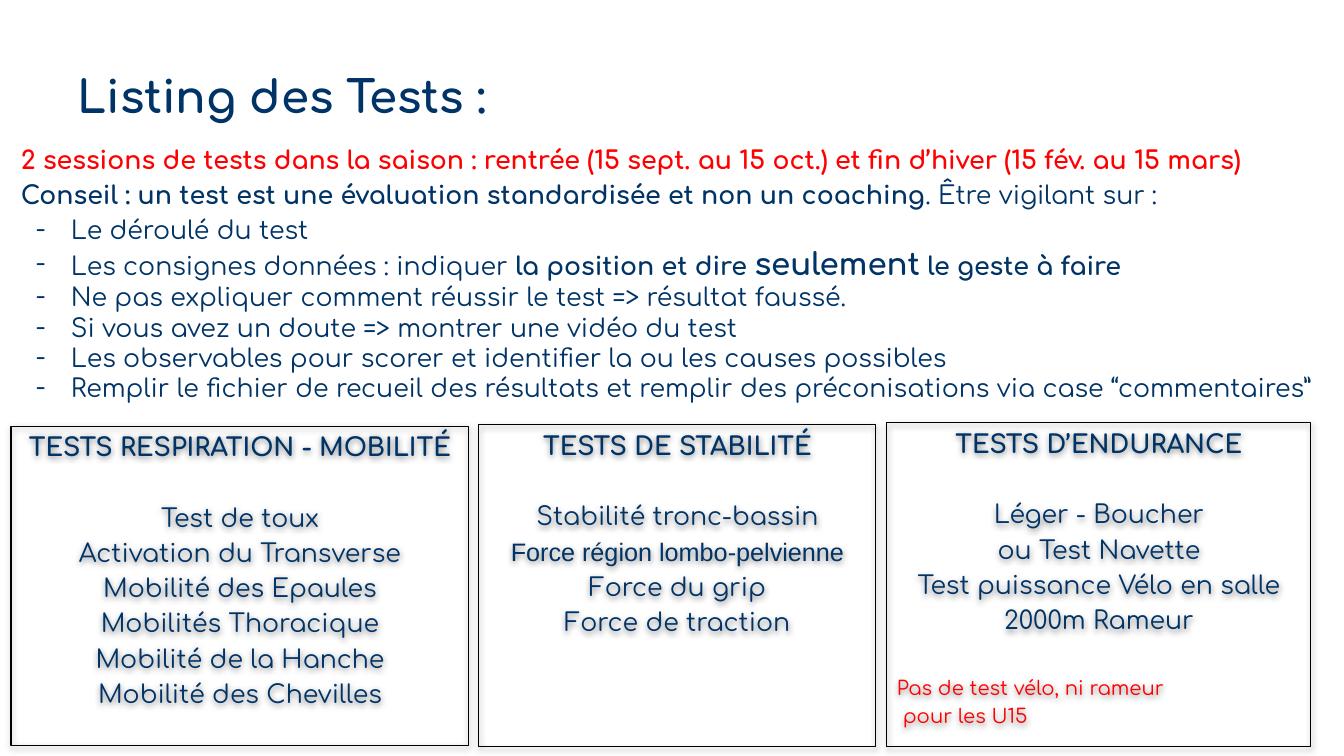
from dataclasses import dataclass

from lxml import etree
from pptx import Presentation
from pptx import util as u
from pptx.dml.color import RGBColor
from pptx.enum import shapes, text
from pptx.oxml.ns import qn

EMU_PER_PX = 914400 / 100.8
FONT = "Comfortaa"
COLOURS = {"navy": "003366", "red": "FF0000", "black": "000000"}
LINE_GAP = 3.6   # points before a paragraph
GROUP_GAP = 29   # points before a new group: one line more


@dataclass(frozen=True)
class Run:
    words: str
    size: int = 18
    bold: bool = False
    colour: str = "navy"
    font: str = FONT


@dataclass(frozen=True)
class Line:
    runs: tuple[Run, ...]
    before: float = LINE_GAP
    centred: bool = False
    indent: int = 0
    bullet: bool = False


@dataclass(frozen=True)
class Panel:
    left: int
    top: int
    width: int
    height: int
    heading: str
    tests: tuple[Run, ...]
    notes: tuple[Line, ...] = ()


def px(length: int) -> u.Emu:
    return u.Emu(round(length * EMU_PER_PX))


def rgb(name: str) -> RGBColor:
    return RGBColor.from_string(COLOURS[name])


def add_dash(paragraph) -> None:
    props = paragraph._p.get_or_add_pPr()
    props.set("indent", str(-px(35)))
    colour = etree.SubElement(props, qn("a:buClr"))
    etree.SubElement(colour, qn("a:srgbClr"), val=COLOURS["navy"])
    etree.SubElement(props, qn("a:buFont"), typeface=FONT)
    etree.SubElement(props, qn("a:buChar"), char="-")


def write(frame, lines: list[Line]) -> None:
    frame.word_wrap = True
    for number, line in enumerate(lines):
        paragraph = frame.add_paragraph() if number else frame.paragraphs[0]
        if line.indent:
            paragraph._p.get_or_add_pPr().set("marL", str(px(line.indent)))
        if line.bullet:
            add_dash(paragraph)
        paragraph.alignment = text.PP_ALIGN.CENTER if line.centred else text.PP_ALIGN.LEFT
        paragraph.space_before = u.Pt(line.before if number else 0)
        for part in line.runs:
            run = paragraph.add_run()
            run.text = part.words
            run.font.size = u.Pt(part.size)
            run.font.bold = part.bold
            run.font.name = part.font
            run.font.color.rgb = rgb(part.colour)


def add_text(slide, left: int, top: int, width: int, height: int,
             lines: list[Line], anchor=text.MSO_ANCHOR.TOP) -> None:
    box = slide.shapes.add_textbox(px(left), px(top), px(width), px(height))
    box.text_frame.vertical_anchor = anchor
    write(box.text_frame, lines)


def add_shadow(shape) -> None:
    shape.shadow.inherit = False
    effects = shape._element.spPr.find(qn("a:effectLst"))
    shadow = etree.SubElement(effects, qn("a:outerShdw"), blurRad=str(u.Pt(4.5)),
                              dist=str(u.Pt(1.5)), dir="5400000", rotWithShape="0")
    colour = etree.SubElement(shadow, qn("a:srgbClr"), val=COLOURS["black"])
    etree.SubElement(colour, qn("a:alpha"), val="50000")


def add_panel(slide, panel: Panel) -> None:
    frame = slide.shapes.add_shape(shapes.MSO_SHAPE.RECTANGLE, px(panel.left), px(panel.top),
                                   px(panel.width), px(panel.height))
    frame.fill.background()
    frame.line.color.rgb = rgb("black")
    frame.line.width = u.Pt(0.75)
    add_shadow(frame)
    frame.text_frame.vertical_anchor = text.MSO_ANCHOR.TOP
    heading = Line((Run(panel.heading, bold=True),), centred=True)
    tests = [Line((test,), LINE_GAP if number else GROUP_GAP, centred=True)
             for number, test in enumerate(panel.tests)]
    write(frame.text_frame, [heading, *tests, *panel.notes])


# Test families
PANELS = [
    Panel(479, 425, 397, 322, "TESTS DE STABILITÉ", (
        Run("Stabilité tronc-bassin"),
        Run("Force région lombo-pelvienne", font="Arial"),
        Run("Force du grip"),
        Run("Force de traction"))),
    Panel(887, 423, 424, 324, "TESTS D’ENDURANCE", (
        Run("Léger - Boucher"),
        Run("ou Test Navette"),
        Run("Test puissance Vélo en salle"),
        Run("2000m Rameur")), (
        Line((Run("Pas de test vélo, ni rameur", 14, colour="red"),), GROUP_GAP),
        Line((Run("pour les U15", 14, colour="red"),), indent=6))),
    Panel(11, 426, 458, 320, "TESTS RESPIRATION - MOBILITÉ", (
        Run("Test de toux"),
        Run("Activation du Transverse"),
        Run("Mobilité des Epaules"),
        Run("Mobilités Thoracique"),
        Run("Mobilité de la Hanche"),
        Run("Mobilité des Chevilles"))),
]

# Advice for the testers
SESSIONS = Line((Run("2 sessions de tests dans la saison : rentrée (15 sept. au 15 oct.) "
                     "et fin d’hiver (15 fév. au 15 mars)", bold=True, colour="red"),))
ADVICE = Line((Run("Conseil : un test est une évaluation standardisée et non un coaching", bold=True),
               Run(". Être vigilant sur :")))
WATCH_POINTS = [
    (Run("Le déroulé du test"),),
    (Run("Les consignes données : indiquer "),
     Run("la position et dire ", bold=True),
     Run("seulement", 22, bold=True),
     Run(" le geste à faire", bold=True)),
    (Run("Ne pas expliquer comment réussir le test => résultat faussé."),),
    (Run("Si vous avez un doute => montrer une vidéo du test"),),
    (Run("Les observables pour scorer et identifier la ou les causes possibles"),),
    (Run("Remplir le fichier de recueil des résultats et remplir des préconisations "
         "via case “commentaires”"),),
]


def main() -> None:
    deck = Presentation()
    deck.slide_width, deck.slide_height = px(1344), px(756)
    slide = deck.slides.add_slide(deck.slide_layouts[6])

    # Title
    add_text(slide, 68, 60, 1210, 72, [Line((Run("Listing des Tests :", 32, bold=True),))],
             text.MSO_ANCHOR.MIDDLE)

    # Sessions and advice
    points = [Line(runs, 0 if number else LINE_GAP, indent=50, bullet=True)
              for number, runs in enumerate(WATCH_POINTS)]
    add_text(slide, 11, 139, 1325, 274, [SESSIONS, ADVICE, *points])

    # Panels
    for panel in PANELS:
        add_panel(slide, panel)

    deck.save("out.pptx")


if __name__ == "__main__":
    main()
